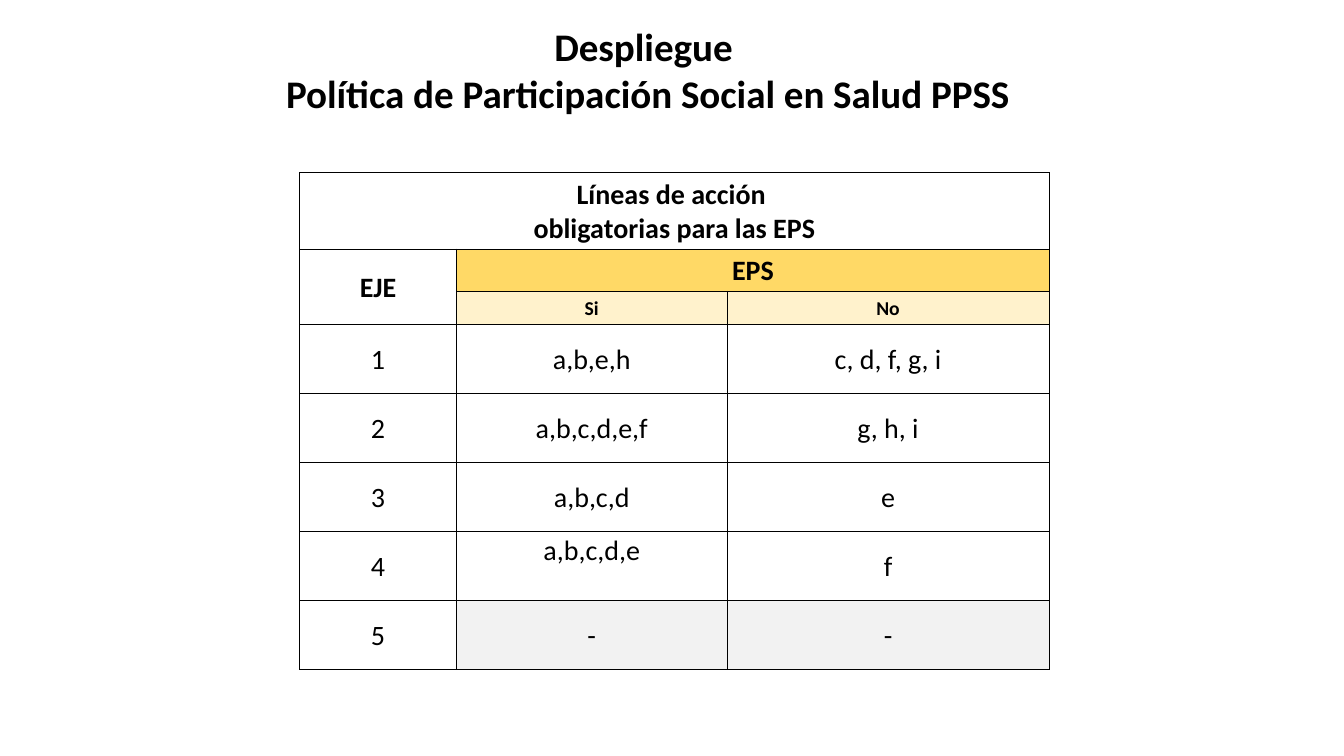
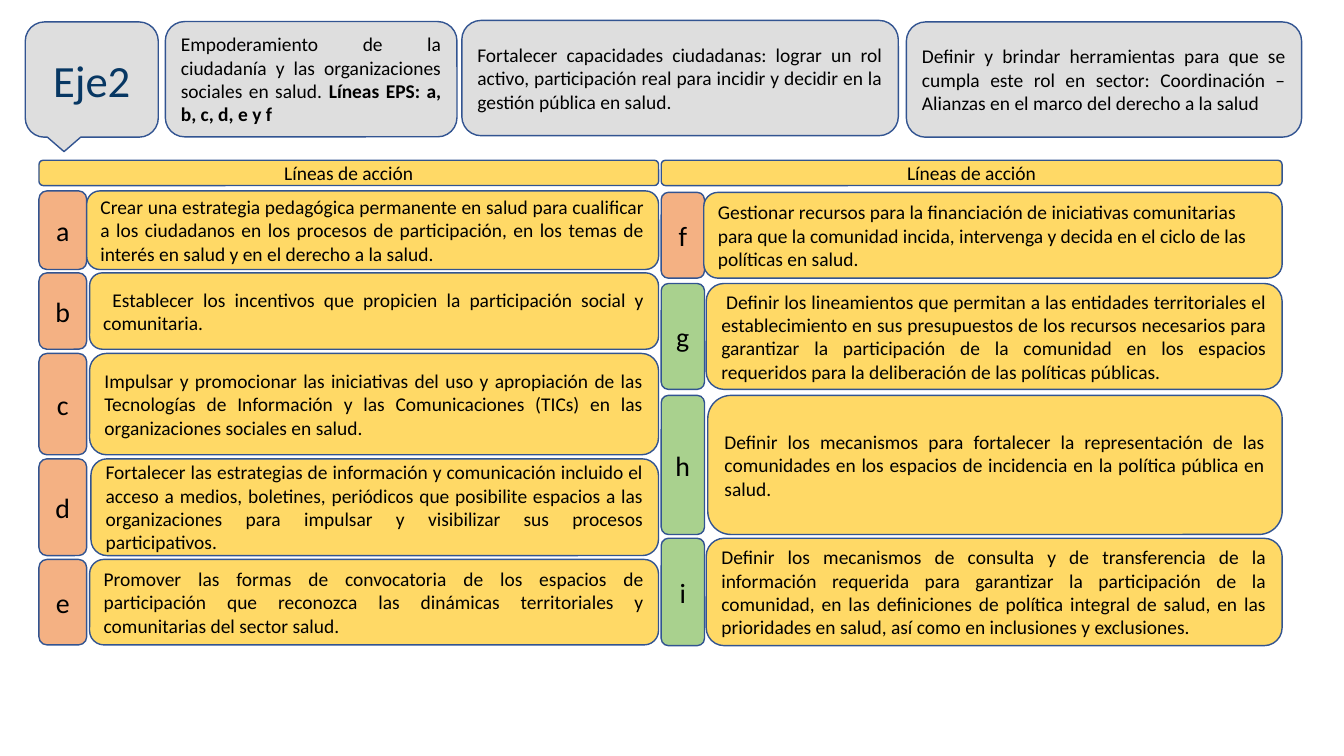
from lxml import etree
from pptx import Presentation, util as u
from pptx.dml.color import RGBColor
from pptx.enum import shapes, text
from pptx.oxml.ns import qn

# Shared look
HUE = {"ink": "000000", "navy": "073763", "edge": "325491", "gray": "A6A6A6",
       "gold": "FFD966", "pale": "FFF2CC", "mist": "F2F2F2",
       "peach": "F4B183", "green": "A9D18E"}
FACE = "Calibri"
SIZE = {"body": 13.9, "mark": 19.9, "cell": 20, "small": 14, "title": 27.9, "axis": 31.9}
WIDE, HIGH = u.Inches(13.33), u.Inches(7.5)
MID, LEFT, JUST = text.PP_ALIGN.CENTER, text.PP_ALIGN.LEFT, text.PP_ALIGN.JUSTIFY
ROUND = shapes.MSO_SHAPE.ROUNDED_RECTANGLE
CALL = shapes.MSO_SHAPE.ROUNDED_RECTANGULAR_CALLOUT

# Table: shares of the slide, in percent
COLS = [11.7, 20.1, 24]
ROWS = [10.13, 5.6, 4.4] + [9.13] * 5
BODY = [("1", "a,b,e,h", "c, d, f, g, i"), ("2", "a,b,c,d,e,f", "g, h, i"),
        ("3", "a,b,c,d", "e"), ("4", "a,b,c,d,e", "f"), ("5", "-", "-")]

# Cards of the top band: left, top, width, runs
CARDS = [
    (12.3, 2.85, 21.7, ["Empoderamiento de la ciudadanía y las organizaciones sociales en salud. ",
                        "Líneas EPS: a, b, c, d, e y f"]),
    (34.36, 2.7, 32.48, ["Fortalecer capacidades ciudadanas: lograr un rol activo, participación real "
                         "para incidir y decidir en la gestión pública en salud."]),
    (67.44, 2.9, 29.41, ["Definir y brindar herramientas para que se cumpla este rol en sector: "
                         "Coordinación – Alianzas en el marco del derecho a la salud"]),
]

# Lines of action: mark, fill, top, height, text left, alignment, text
FIRST = [
    ("a", "peach", 25.25, 10.4, 6.45, JUST,
     "Crear una estrategia pedagógica permanente en salud para cualificar a los ciudadanos en los "
     "procesos de participación, en los temas de interés en salud y en el derecho a la salud."),
    ("b", "peach", 36.1, 10.1, 6.67, JUST,
     " Establecer los incentivos que propicien la participación social y comunitaria."),
    ("c", "peach", 46.75, 13.4, 6.67, JUST,
     "Impulsar y promocionar las iniciativas del uso y apropiación de las Tecnologías de Información "
     "y las Comunicaciones (TICs) en las organizaciones sociales en salud."),
    ("d", "peach", 60.7, 12.8, 6.77, JUST,
     "Fortalecer las estrategias de información y comunicación incluido el acceso a medios, boletines, "
     "periódicos que posibilite espacios a las organizaciones para impulsar y visibilizar sus procesos "
     "participativos."),
    ("e", "peach", 74, 11.3, 6.67, JUST,
     "Promover las formas de convocatoria de los espacios de participación que reconozca las dinámicas "
     "territoriales y comunitarias del sector salud."),
]
SECOND = [
    ("f", "peach", 25.45, 11.35, 52.36, LEFT,
     "Gestionar recursos para la financiación de iniciativas comunitarias para que la comunidad incida, "
     "intervenga y decida en el ciclo de las políticas en salud."),
    ("g", "green", 37.5, 14, 52.55, JUST,
     " Definir los lineamientos que permitan a las entidades territoriales el establecimiento en sus "
     "presupuestos de los recursos necesarios para garantizar la participación de la comunidad en los "
     "espacios requeridos para la deliberación de las políticas públicas."),
    ("h", "green", 52.3, 18.4, 52.66, JUST,
     "Definir los mecanismos para fortalecer la representación de las comunidades en los espacios de "
     "incidencia en la política pública en salud."),
    ("i", "green", 71.2, 14.2, 52.55, JUST,
     "Definir los mecanismos de consulta y de transferencia de la información requerida para garantizar "
     "la participación de la comunidad, en las definiciones de política integral de salud, en las "
     "prioridades en salud, así como en inclusiones y exclusiones."),
]


def tint(name):
    return RGBColor.from_string(HUE[name])


def across(share):
    return int(WIDE * share / 100)


def down(share):
    return int(HIGH * share / 100)


def area(x, y, w, h):
    return across(x), down(y), across(w), down(h)


def write(frame, lines, size, align=MID, bold=False, hue="ink"):
    """Fill a frame; each line is a list of runs, those after the first bold."""
    frame.word_wrap = True
    for n, runs in enumerate(lines):
        para = frame.paragraphs[0] if n == 0 else frame.add_paragraph()
        para.alignment = align
        font = para.font
        font.name, font.size, font.bold = FACE, u.Pt(SIZE[size]), bold
        font.color.rgb = tint(hue)
        for k, words in enumerate(runs):
            run = para.add_run()
            run.text = words
            if k:
                run.font.bold = True


def box(slide, place, fill, runs, size="body", align=MID, hue="ink", kind=ROUND, alpha=None):
    shape = slide.shapes.add_shape(kind, *area(*place))
    shape.shadow.inherit = False
    shape.fill.solid()
    shape.fill.fore_color.rgb = tint(fill)
    if alpha:
        color = shape.element.spPr.find(qn("a:solidFill"))[0]
        etree.SubElement(color, qn("a:alpha"), val=str(alpha * 1000))
    shape.line.color.rgb = tint("edge")
    shape.line.width = u.Pt(1)
    shape.text_frame.vertical_anchor = text.MSO_ANCHOR.MIDDLE
    write(shape.text_frame, [runs], size, align, hue=hue)


def title(slide, lines):
    frame = slide.shapes.add_textbox(*area(0.23, 5.73, 95.95, 10.27)).text_frame
    frame.vertical_anchor = text.MSO_ANCHOR.BOTTOM
    write(frame, [[line] for line in lines], "title", bold=True)


def frame_cell(cell):
    props = cell._tc.get_or_add_tcPr()
    for side in ("lnL", "lnR", "lnT", "lnB"):
        line = etree.SubElement(props, qn("a:" + side), w=str(u.Pt(0.5)))
        fill = etree.SubElement(line, qn("a:solidFill"))
        etree.SubElement(fill, qn("a:srgbClr"), val=HUE["ink"])


def put(cell, lines, size="cell", bold=False, fill=None):
    write(cell.text_frame, [[line] for line in lines], size, bold=bold)
    if fill:
        cell.fill.solid()
        cell.fill.fore_color.rgb = tint(fill)


def grid(slide):
    place = area(22.28, 22.8, sum(COLS), sum(ROWS))
    table = slide.shapes.add_table(len(ROWS), len(COLS), *place).table
    table.first_row = table.horz_banding = False
    for col, share in zip(table.columns, COLS):
        col.width = across(share)
    for row, share in zip(table.rows, ROWS):
        row.height = down(share)
    for cell in table.iter_cells():
        frame_cell(cell)
        cell.fill.background()
        cell.vertical_anchor = text.MSO_ANCHOR.MIDDLE
        cell.margin_left = cell.margin_right = cell.margin_top = u.Inches(0.02)
        cell.margin_bottom = 0
    # Merged heads
    for start, end in (((0, 0), (0, 2)), ((1, 0), (2, 0)), ((1, 1), (1, 2))):
        table.cell(*start).merge(table.cell(*end))
    put(table.cell(0, 0), ["Líneas de acción ", "obligatorias para las EPS"], bold=True)
    put(table.cell(1, 0), ["EJE"], bold=True)
    put(table.cell(1, 1), ["EPS"], bold=True, fill="gold")
    for c, word in enumerate(("Si", "No"), 1):
        put(table.cell(2, c), [word], "small", True, "pale")
    # Body
    for r, values in enumerate(BODY, 3):
        for c, value in enumerate(values):
            put(table.cell(r, c), [value], fill="mist" if value == "-" else None)
    table.cell(6, 1).vertical_anchor = text.MSO_ANCHOR.TOP


def panel(slide, left, right, wide, rows):
    """One column of lines of action, with its heading."""
    for mark, fill, top, tall, start, align, words in rows:
        box(slide, (left, top, wide, tall), fill, [mark], "mark")
        box(slide, (start, top, right - start, tall), "gold", [words], align=align)
    box(slide, (left, 21.2, right - left, 3.35), "gold", ["Líneas de acción"])


def band(slide):
    tall = 15.25
    for x, y, wide, runs in CARDS:
        box(slide, (x, y, wide, tall), "gray", runs, align=JUST, alpha=36)
    box(slide, (1.88, 2.9, 9.9, tall), "gray", ["Eje2"], "axis", hue="navy", kind=CALL, alpha=36)


def main():
    deck = Presentation()
    deck.slide_width, deck.slide_height = WIDE, HIGH
    blank = deck.slide_layouts[6]
    # Overview table
    slide = deck.slides.add_slide(blank)
    title(slide, ["Despliegue ", "Política de Participación Social en Salud PPSS"])
    grid(slide)
    # Second axis
    slide = deck.slides.add_slide(blank)
    panel(slide, 2.9, 49, 3.55, FIRST)
    band(slide)
    panel(slide, 49.2, 95.4, 3.22, SECOND)
    deck.save("out.pptx")


if __name__ == "__main__":
    main()
